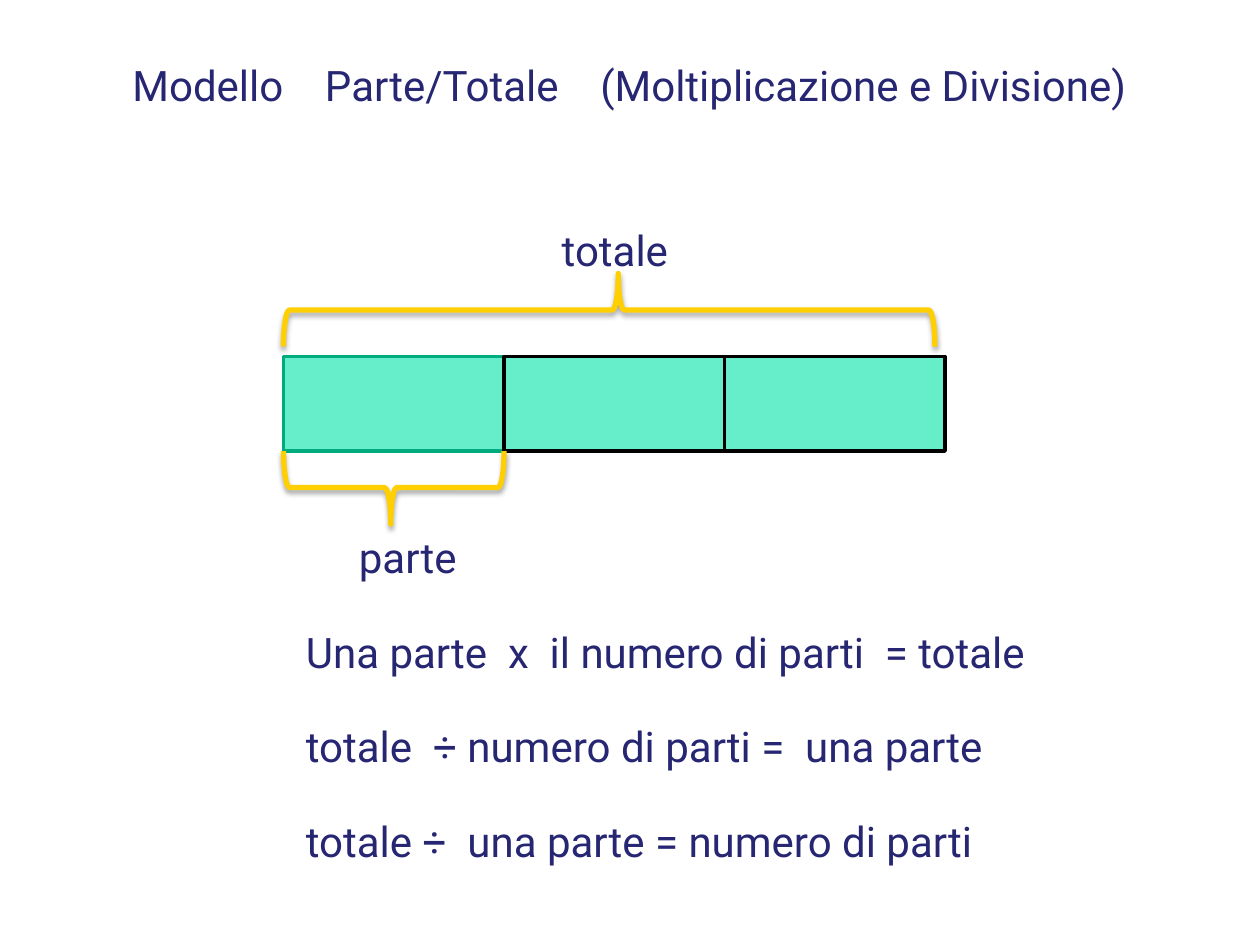
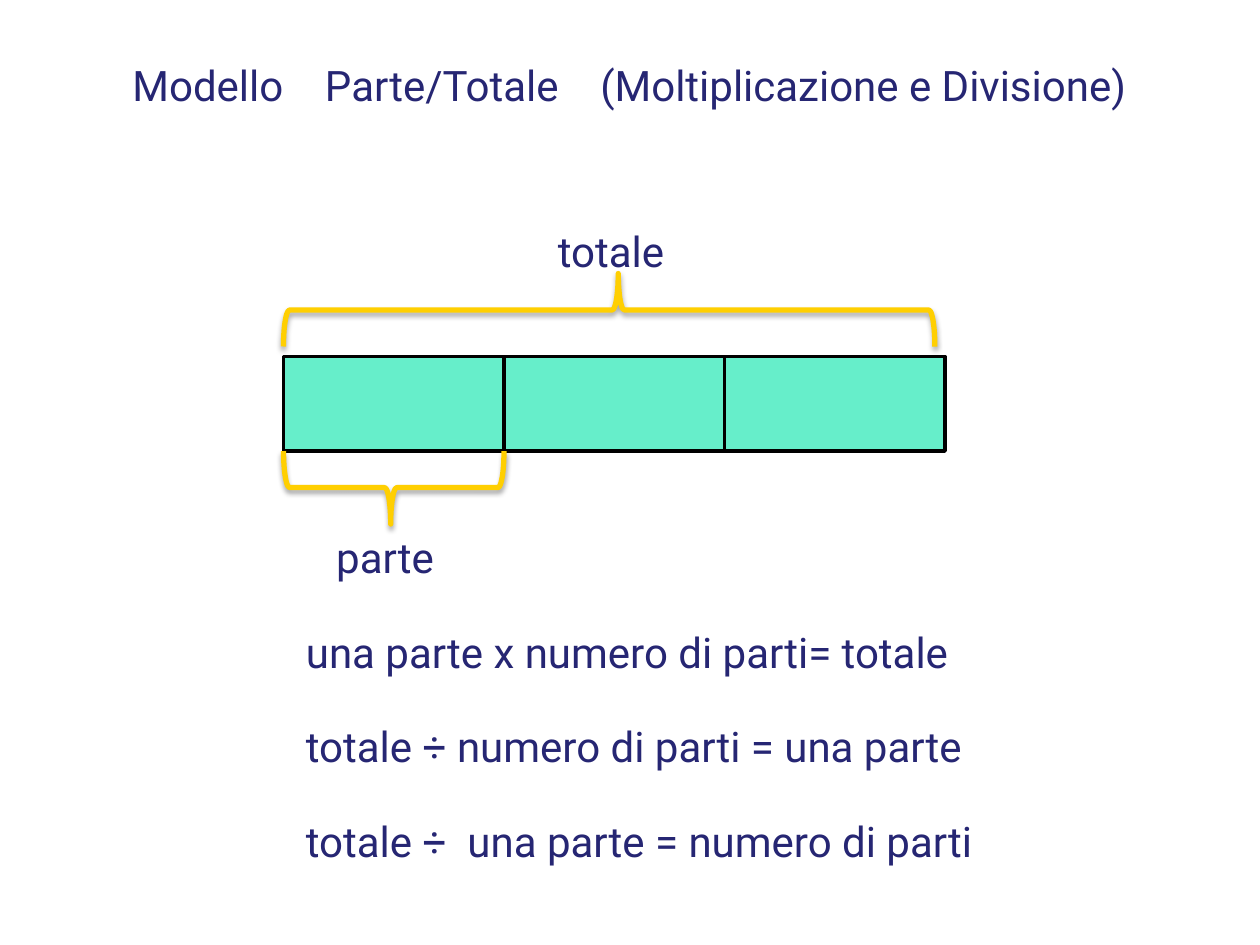
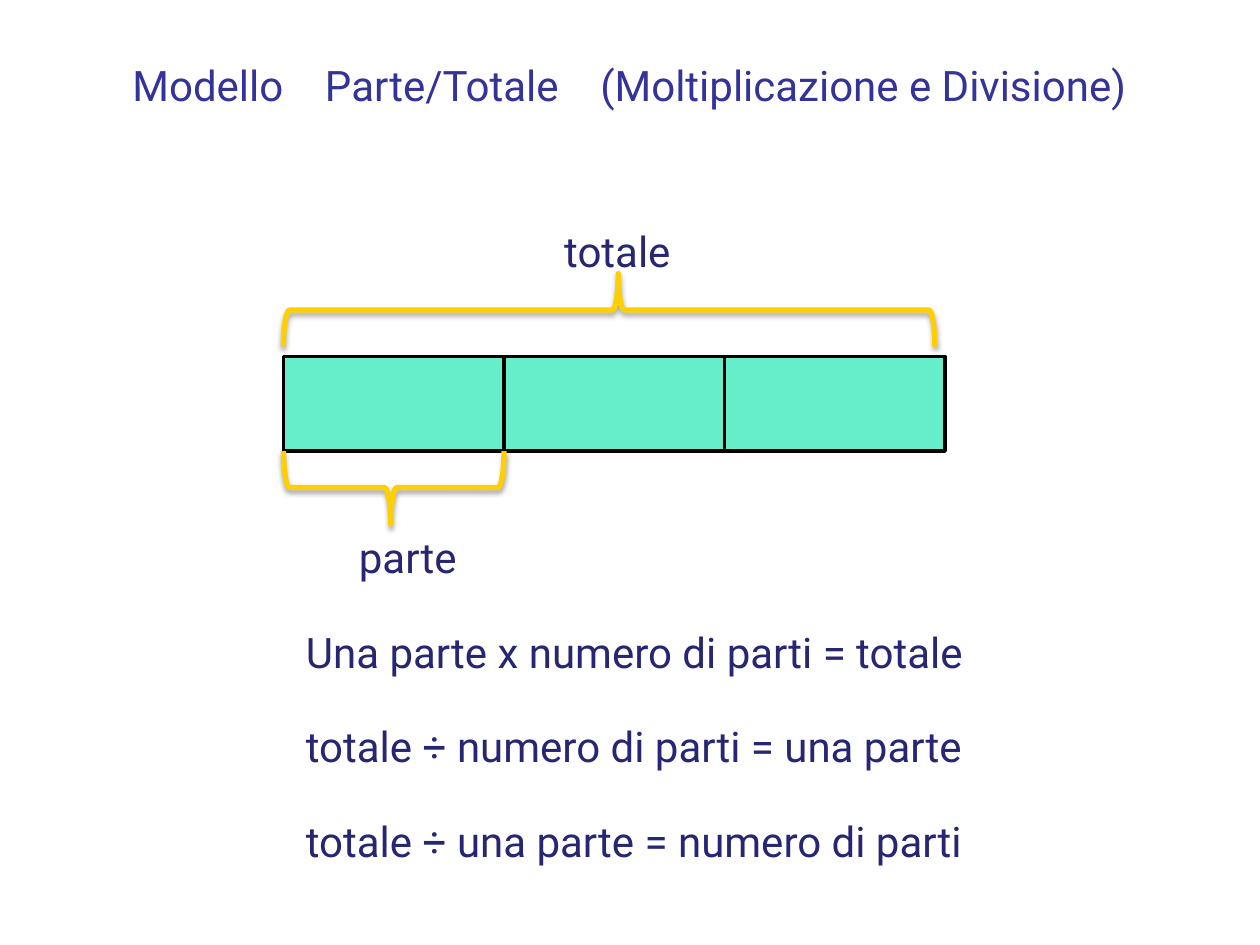
from lxml.etree import SubElement
from pptx import Presentation
from pptx.dml.color import RGBColor
from pptx.enum.shapes import MSO_SHAPE
from pptx.enum.text import MSO_ANCHOR, MSO_AUTO_SIZE, PP_ALIGN
from pptx.oxml.ns import qn
from pptx.util import Inches, Pt

NAVY = RGBColor(0x26, 0x26, 0x73)
INDIGO = RGBColor(0x33, 0x33, 0x99)
MINT = RGBColor(0x00, 0xE4, 0xA8)
GREEN = RGBColor(0x00, 0xAB, 0x7E)
YELLOW = RGBColor(0xFF, 0xCF, 0x01)
BLACK = RGBColor(0, 0, 0)

FONT = "Roboto"
TITLE = "Modello    Parte/Totale    (Moltiplicazione e Divisione)"
PART_COUNT = 3
BAR = (2.25, 2.83, 5.25, 0.75)
BRACE_H = 0.58
TOTAL_W = 5.17
FORMULAS_BOX = (2.33, 4.92, 7.07, 0.5)
FORMULA_STEP = 0.75

SLIDES = [
    {
        "title_color": NAVY,
        "first_line": GREEN,
        "total_at": (4.36, 1.73),
        "part_at": (2.75, 4.17),
        "formulas": [
            "Una parte  x  il numero di parti  = totale",
            "totale  ÷ numero di parti =  una parte",
            "totale ÷  una parte = numero di parti",
        ],
    },
    {
        "title_color": NAVY,
        "first_line": BLACK,
        "total_at": (4.33, 1.74),
        "part_at": (2.57, 4.17),
        "formulas": [
            "una parte x numero di parti= totale",
            "totale ÷ numero di parti = una parte",
            "totale ÷  una parte = numero di parti",
        ],
    },
    {
        "title_color": INDIGO,
        "first_line": BLACK,
        "total_at": (4.38, 1.74),
        "part_at": (2.75, 4.17),
        "formulas": [
            "Una parte x numero di parti = totale",
            "totale ÷ numero di parti = una parte",
            "totale ÷ una parte = numero di parti",
        ],
    },
]


def set_text(sp, text, color=NAVY, align=PP_ALIGN.LEFT):
    tf = sp.text_frame
    tf.text = text
    tf.word_wrap = True
    tf.auto_size = MSO_AUTO_SIZE.SHAPE_TO_FIT_TEXT
    tf.vertical_anchor = MSO_ANCHOR.TOP
    p = tf.paragraphs[0]
    p.alignment = align
    font = p.runs[0].font
    font.name = FONT
    font.size = Pt(24)
    font.color.rgb = color


def add_title(s, color):
    sp = s.shapes.title
    sp.left, sp.top = Inches(0.58), Inches(0.42)
    sp.width, sp.height = Inches(8.83), Inches(0.5)
    set_text(sp, TITLE, color, PP_ALIGN.CENTER)


def add_label(s, text, x, y, w, h=0.5):
    sp = s.shapes.add_textbox(Inches(x), Inches(y), Inches(w), Inches(h))
    set_text(sp, text)


def add_part(s, x, y, w, h, line_color):
    sp = s.shapes.add_shape(
        MSO_SHAPE.RECTANGLE, Inches(x), Inches(y), Inches(w), Inches(h))
    sp.shadow.inherit = False
    sp.fill.solid()
    sp.fill.fore_color.rgb = MINT
    color = sp.fill._xPr.find(qn("a:solidFill"))[0]
    SubElement(color, qn("a:alpha"), val="60000")
    sp.line.color.rgb = line_color
    sp.line.width = Pt(2)


def add_brace(s, x, y, w, h, rotation):
    sp = s.shapes.add_shape(
        MSO_SHAPE.RIGHT_BRACE,
        Inches(x + (w - h) / 2), Inches(y + (h - w) / 2), Inches(h), Inches(w))
    sp.rotation = rotation
    sp.adjustments[0] = 0.083
    sp.adjustments[1] = 0.514
    sp.fill.background()
    sp.line.color.rgb = YELLOW
    sp.line.width = Pt(3)
    add_shadow(sp)


def add_shadow(sp):
    sp.shadow.inherit = False
    effects = sp._element.spPr.find(qn("a:effectLst"))
    shadow = SubElement(
        effects, qn("a:outerShdw"), blurRad=str(Pt(3.1)), dist=str(Pt(1.8)),
        dir="5400000", rotWithShape="0")
    color = SubElement(shadow, qn("a:srgbClr"), val=str(BLACK))
    SubElement(color, qn("a:alpha"), val="35000")


def add_bar_model(s, x, y, w, h, first_line):
    part_w = w / PART_COUNT
    for i in range(PART_COUNT):
        line_color = BLACK if i else first_line
        add_part(s, x + i * part_w, y, part_w, h, line_color)
    add_brace(s, x, y + h, part_w, BRACE_H, 90)
    add_brace(s, x, y - 0.66, TOTAL_W, BRACE_H, 270)


def add_formulas(s, formulas, x, y, w, h):
    for i, formula in enumerate(formulas):
        add_label(s, formula, x, y + i * FORMULA_STEP, w, h)


def add_model_slide(prs, title_color, first_line, total_at, part_at, formulas):
    s = prs.slides.add_slide(prs.slide_layouts[5])
    add_title(s, title_color)
    add_bar_model(s, *BAR, first_line)
    add_label(s, "parte", *part_at, 1.28)
    add_label(s, "totale", *total_at, 1.33)
    add_formulas(s, formulas, *FORMULAS_BOX)


def main():
    prs = Presentation()
    prs.slide_width = Inches(10)
    prs.slide_height = Inches(7.5)
    for content in SLIDES:
        add_model_slide(prs, **content)
    prs.save("out.pptx")


if __name__ == "__main__":
    main()
